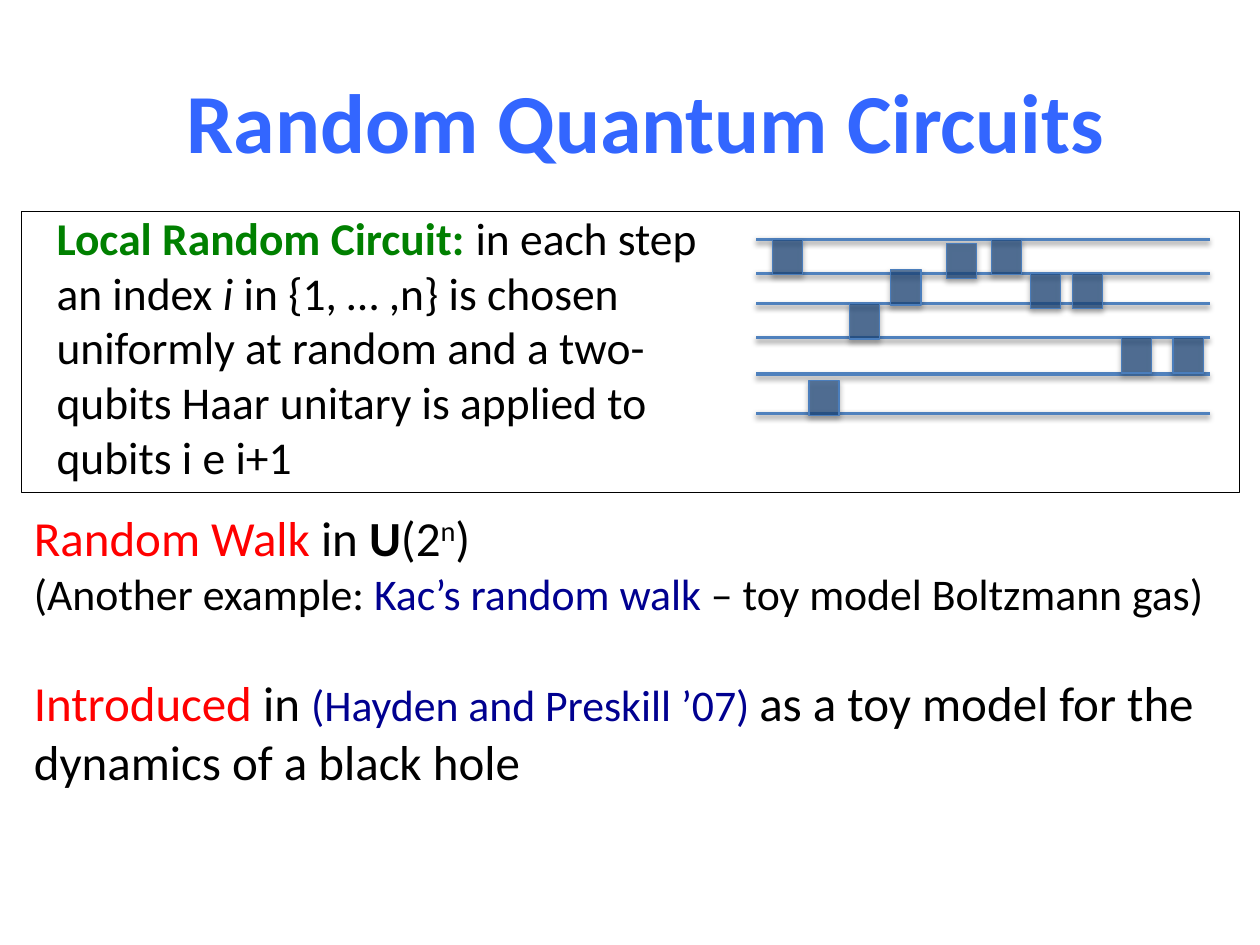
from lxml import etree
from pptx import Presentation
from pptx.dml.color import RGBColor
from pptx.enum.shapes import MSO_CONNECTOR, MSO_SHAPE
from pptx.enum.text import MSO_ANCHOR, PP_ALIGN
from pptx.oxml.ns import qn
from pptx.util import Inches, Pt

RECT = MSO_SHAPE.RECTANGLE
STRAIGHT = MSO_CONNECTOR.STRAIGHT
MIDDLE = MSO_ANCHOR.MIDDLE
LEFT, CENTER = PP_ALIGN.LEFT, PP_ALIGN.CENTER

BLACK = RGBColor(0x00, 0x00, 0x00)
TITLE_BLUE = RGBColor(0x33, 0x66, 0xFF)
GREEN = RGBColor(0x00, 0x80, 0x00)
RED = RGBColor(0xFF, 0x00, 0x00)
NAVY = RGBColor(0x00, 0x00, 0x90)
WIRE = RGBColor(0x4F, 0x81, 0xBD)
GATE_FILL = RGBColor(0x1F, 0x49, 0x7D)
GATE_LINE = RGBColor(0x4B, 0x7E, 0xBC)

WIRE_OFFSETS = [0, 0.27, 0.51, 0.78, 1.07, 1.38]
GATES = [(0.13, 0), (0.42, 1.12), (0.74, 0.51), (1.07, 0.24), (1.51, 0.03),
         (1.87, 0), (2.18, 0.27), (2.51, 0.27), (2.9, 0.78), (3.31, 0.78)]
GATE_W, GATE_H = 0.24, 0.28


def add_text(slide, left, top, width, height):
    """Add a wrapping text box and return its text frame."""
    box = slide.shapes.add_textbox(Inches(left), Inches(top), Inches(width), Inches(height))
    tf = box.text_frame
    tf.word_wrap = True
    return tf


def add_runs(p, runs, align=LEFT):
    """Fill a paragraph with (text, size, colour, style) runs."""
    p.alignment = align
    for text, size, color, style in runs:
        r = p.add_run()
        r.text = text
        r.font.name = "Calibri"
        r.font.size = Pt(size)
        r.font.color.rgb = color
        r.font.bold = style == "bold"
        r.font.italic = style == "italic"
        if style == "super":
            r._r.get_or_add_rPr().set("baseline", "30000")


def add_shadow(sp, distance, opacity):
    """Give a shape or connector a soft black shadow below it."""
    effects = etree.SubElement(sp._element.spPr, qn("a:effectLst"))
    shadow = etree.SubElement(effects, qn("a:outerShdw"), blurRad=str(Pt(3.1)),
                              dist=str(Pt(distance)), dir="5400000", rotWithShape="0")
    color = etree.SubElement(shadow, qn("a:srgbClr"), val=str(BLACK))
    etree.SubElement(color, qn("a:alpha"), val=str(opacity * 1000))


def add_wire(slide, left, top, width):
    """Draw one horizontal qubit wire."""
    line = slide.shapes.add_connector(STRAIGHT, Inches(left), Inches(top),
                                      Inches(left + width), Inches(top))
    line.line.color.rgb = WIRE
    line.line.width = Pt(2)
    add_shadow(line, 1.6, 38)


def add_gate(slide, left, top):
    """Draw one translucent two-qubit gate."""
    sp = slide.shapes.add_shape(RECT, Inches(left), Inches(top), Inches(GATE_W), Inches(GATE_H))
    sp.fill.solid()
    sp.fill.fore_color.rgb = GATE_FILL
    color = sp._element.spPr.find(qn("a:solidFill")).find(qn("a:srgbClr"))
    etree.SubElement(color, qn("a:alpha"), val="70000")
    sp.line.color.rgb = GATE_LINE
    sp.line.width = Pt(0.75)
    add_shadow(sp, 1.8, 35)


def add_title(slide, left, top, width, height):
    """Place the slide title."""
    tf = add_text(slide, left, top, width, height)
    tf.vertical_anchor = MIDDLE
    add_runs(tf.paragraphs[0], [("Random Quantum Circuits", 48, TITLE_BLUE, "bold")], CENTER)


def add_circuit(slide, left, top, width):
    """Draw the wires and the gates that act on them."""
    for dy in WIRE_OFFSETS:
        add_wire(slide, left, top + dy, width)
    for dx, dy in GATES:
        add_gate(slide, left + dx, top + dy)


def add_definition(slide, left, top, width, height):
    """Place the framed definition with its circuit diagram."""
    tf = add_text(slide, left + 0.18, top - 0.06, 5.62, height + 0.06)
    add_runs(tf.paragraphs[0], [
        ("Local Random Circuit: ", 26, GREEN, "bold"),
        ("in each step an index ", 26, BLACK, None),
        ("i ", 26, BLACK, "italic"),
        ("in {1, … ,n} is chosen uniformly at random and a two-qubits Haar unitary "
         "is applied to qubits i e i+1", 26, BLACK, None),
    ])
    add_circuit(slide, left + 5.83, top + 0.22, 3.6)
    frame = slide.shapes.add_shape(RECT, Inches(left), Inches(top), Inches(width), Inches(height))
    frame.fill.background()
    frame.line.color.rgb = BLACK
    frame.line.width = Pt(0.75)
    frame.shadow.inherit = False


def add_remarks(slide, left, top, width, height):
    """Place the remarks on random walks and black holes."""
    tf = add_text(slide, left, top, width, height)
    add_runs(tf.paragraphs[0], [
        ("Random Walk ", 28, RED, None),
        ("in ", 28, BLACK, None),
        ("U", 28, BLACK, "bold"),
        ("(2", 28, BLACK, None),
        ("n", 28, BLACK, "super"),
        (")", 28, BLACK, None),
    ])
    add_runs(tf.add_paragraph(), [
        ("(Another example: ", 25, BLACK, None),
        ("Kac’s random walk ", 25, NAVY, None),
        ("– toy model Boltzmann gas)", 25, BLACK, None),
    ])
    p = tf.add_paragraph()
    p.space_before = Pt(30.5)
    add_runs(p, [
        ("Introduced", 28, RED, None),
        (" in ", 28, BLACK, None),
        ("(Hayden and Preskill ’07) ", 25, NAVY, None),
        ("as a toy model for the dynamics of a black hole", 28, BLACK, None),
    ])


def main():
    """Build and save the slide."""
    prs = Presentation()
    prs.slide_width, prs.slide_height = Inches(10), Inches(7.5)
    s = prs.slides.add_slide(prs.slide_layouts[6])
    add_title(s, 0.17, 0, 9.91, 1.91)
    add_definition(s, 0.17, 1.68, 9.67, 2.23)
    add_remarks(s, 0.17, 3.98, 9.61, 2.36)
    prs.save("out.pptx")


if __name__ == "__main__":
    main()
